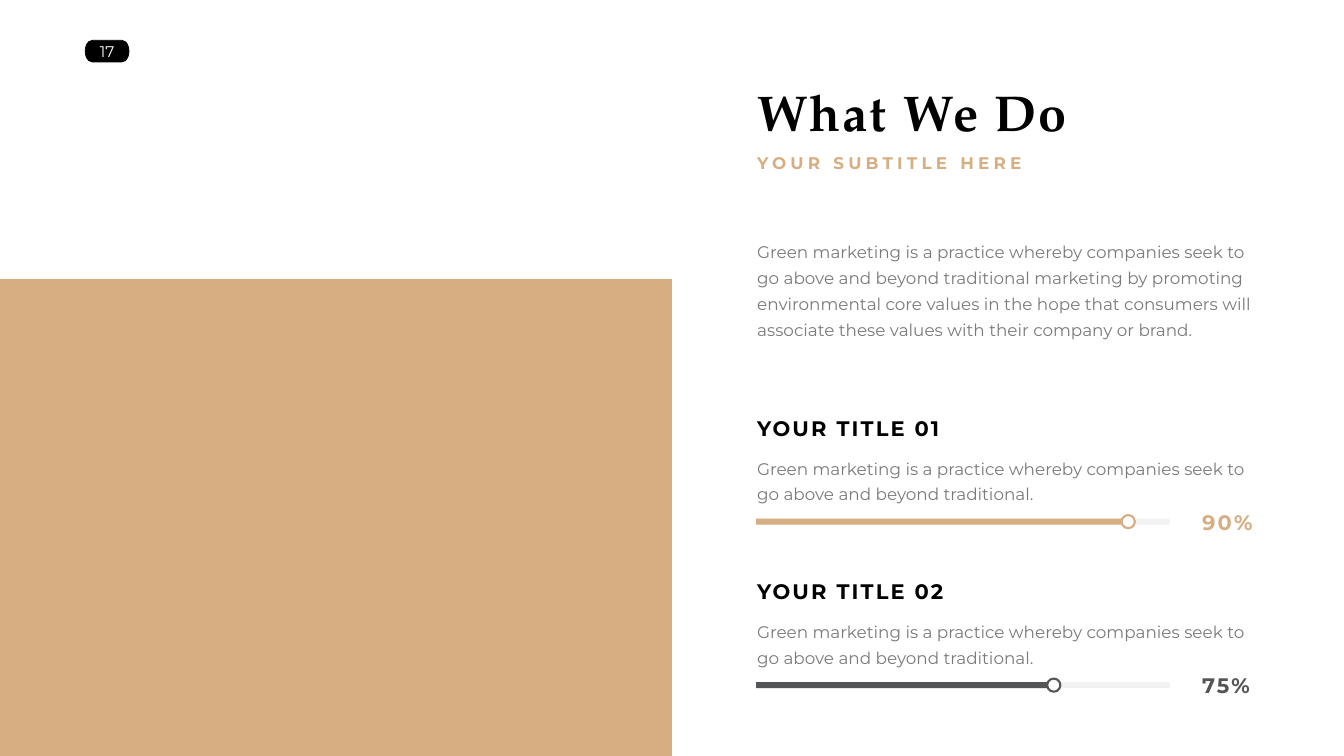
from dataclasses import dataclass
from typing import Optional

from pptx import Presentation
from pptx import util as u
from pptx.dml.color import RGBColor
from pptx.enum import shapes, text
from pptx.oxml.xmlchemy import OxmlElement

WIDTH, HEIGHT = u.Inches(26.66), u.Inches(15)
SAND, BLACK, WHITE = "D6AE81", "000000", "FFFFFF"
GREY, CHARCOAL, TRACK = "7A7A7A", "545557", "F2F2F2"
SANS, SERIF = "Montserrat", "TeX Gyre Pagella"


@dataclass(frozen=True)
class Box:
    """A frame in percent of the slide's width and height."""
    left: float
    top: float
    width: float
    height: float

    def emu(self) -> tuple:
        return (int(WIDTH * self.left / 100), int(HEIGHT * self.top / 100),
                int(WIDTH * self.width / 100), int(HEIGHT * self.height / 100))


@dataclass(frozen=True)
class Style:
    size: float
    color: str
    font: str = SANS
    bold: bool = False
    tracking: float = 0
    leading: Optional[float] = None
    wrap: bool = False
    anchor: text.MSO_ANCHOR = text.MSO_ANCHOR.TOP
    align: text.PP_ALIGN = text.PP_ALIGN.LEFT


@dataclass(frozen=True)
class Skill:
    title: str
    label: str
    filled: float  # share of the track
    color: str


MIDDLE = text.MSO_ANCHOR.MIDDLE
TITLE = Style(72, BLACK, SERIF, bold=True, tracking=3)
SUBTITLE = Style(24, SAND, bold=True, tracking=6, leading=37)
BODY = Style(24, GREY, leading=37, wrap=True)
PAGE = Style(22, WHITE, anchor=MIDDLE, align=text.PP_ALIGN.CENTER)

TEXT_LEFT, TEXT_WIDTH = 55.96, 38.41
BAR_LEFT, BAR_WIDTH, BAR_HEIGHT = 56.26, 30.76, 0.8
DOT_WIDTH = 0.98
DOT_HEIGHT = DOT_WIDTH * WIDTH / HEIGHT
SKILLS_TOP, SKILL_PITCH = 54.53, 21.63

INTRO = ("Green marketing is a practice whereby companies seek to go above and "
         "beyond traditional marketing by promoting environmental core values in "
         "the hope that consumers will associate these values with their company "
         "or brand.")
SKILL_TEXT = ("Green marketing is a practice whereby companies seek to go above "
              "and beyond traditional.")
SKILLS = [Skill("YOUR TITLE 01", "90%", 0.9, SAND),
          Skill("YOUR TITLE 02", "75%", 0.72, CHARCOAL)]


def rgb(color: str) -> RGBColor:
    return RGBColor.from_string(color)


def heading(color: str) -> Style:
    return Style(30, color, bold=True, tracking=3, anchor=MIDDLE)


def write(shape, words: str, style: Style) -> None:
    frame = shape.text_frame
    frame.text = words
    frame.word_wrap = style.wrap
    frame.vertical_anchor = style.anchor
    paragraph = frame.paragraphs[0]
    paragraph.alignment = style.align
    paragraph.space_before = u.Pt(0)
    if style.leading:
        paragraph.line_spacing = u.Pt(style.leading)
    run = paragraph.runs[0]
    run.font.name = style.font
    run.font.size = u.Pt(style.size)
    run.font.bold = style.bold
    run.font.color.rgb = rgb(style.color)
    if style.tracking:
        run.font._element.set("spc", str(int(style.tracking * 100)))


def fill_placeholder(shape, box: Box, words: str, style: Style) -> None:
    shape.left, shape.top, shape.width, shape.height = box.emu()
    write(shape, words, style)
    shape.text_frame.auto_size = text.MSO_AUTO_SIZE.SHAPE_TO_FIT_TEXT
    # Plain text: no bullet and no hanging indent
    properties = shape.text_frame.paragraphs[0]._p.get_or_add_pPr()
    properties.set("marL", "0")
    properties.set("indent", "0")
    properties.append(OxmlElement("a:buNone"))


def add_text(slide, box: Box, words: str, style: Style) -> None:
    shape = slide.shapes.add_textbox(*box.emu())
    write(shape, words, style)
    shape.text_frame.auto_size = text.MSO_AUTO_SIZE.SHAPE_TO_FIT_TEXT


def add_shape(slide, kind: shapes.MSO_SHAPE, box: Box, fill: str,
              line: Optional[str] = None, line_width: float = 1):
    shape = slide.shapes.add_shape(kind, *box.emu())
    shape.shadow.inherit = False
    shape.fill.solid()
    shape.fill.fore_color.rgb = rgb(fill)
    if line:
        shape.line.color.rgb = rgb(line)
        shape.line.width = u.Pt(line_width)
    else:
        shape.line.fill.background()
    return shape


def add_skill(slide, skill: Skill, top: float) -> None:
    add_text(slide, Box(TEXT_LEFT, top, 14.7, 4.07), skill.title, heading(BLACK))
    add_text(slide, Box(TEXT_LEFT, top + 5, TEXT_WIDTH, 7.27), SKILL_TEXT, BODY)

    # Track, filled part and the dot centred on its end
    bar_top, filled_width = top + 14.07, BAR_WIDTH * skill.filled
    for width, color in ((BAR_WIDTH, TRACK), (filled_width, skill.color)):
        add_shape(slide, shapes.MSO_SHAPE.RECTANGLE,
                  Box(BAR_LEFT, bar_top, width, BAR_HEIGHT), color)
    dot = Box(BAR_LEFT + filled_width - DOT_WIDTH / 2,
              bar_top + (BAR_HEIGHT - DOT_HEIGHT) / 2, DOT_WIDTH, DOT_HEIGHT)
    add_shape(slide, shapes.MSO_SHAPE.OVAL, dot, WHITE, skill.color, 3)

    add_text(slide, Box(89.08, top + 12.47, 4.6, 4.07), skill.label,
             heading(skill.color))


def main() -> None:
    presentation = Presentation()
    presentation.slide_width, presentation.slide_height = WIDTH, HEIGHT
    slide = presentation.slides.add_slide(presentation.slide_layouts[1])

    # Page number
    badge = add_shape(slide, shapes.MSO_SHAPE.FLOWCHART_TERMINATOR,
                      Box(6.34, 5.33, 3.26, 2.87), BLACK, BLACK)
    write(badge, "17", PAGE)

    # Colour panel
    add_shape(slide, shapes.MSO_SHAPE.RECTANGLE, Box(0, 36.93, 50, 63.07), SAND)

    # Heading and introduction
    fill_placeholder(slide.shapes.title, Box(TEXT_LEFT, 10.4, 27.34, 8.73),
                     "What We Do", TITLE)
    add_text(slide, Box(TEXT_LEFT, 19.13, 20.97, 3.8), "YOUR SUBTITLE HERE", SUBTITLE)
    fill_placeholder(slide.placeholders[1], Box(TEXT_LEFT, 30.87, TEXT_WIDTH, 14.2),
                     INTRO, BODY)

    # Skills with progress bars
    for row, skill in enumerate(SKILLS):
        add_skill(slide, skill, SKILLS_TOP + row * SKILL_PITCH)

    presentation.save("out.pptx")


if __name__ == "__main__":
    main()
